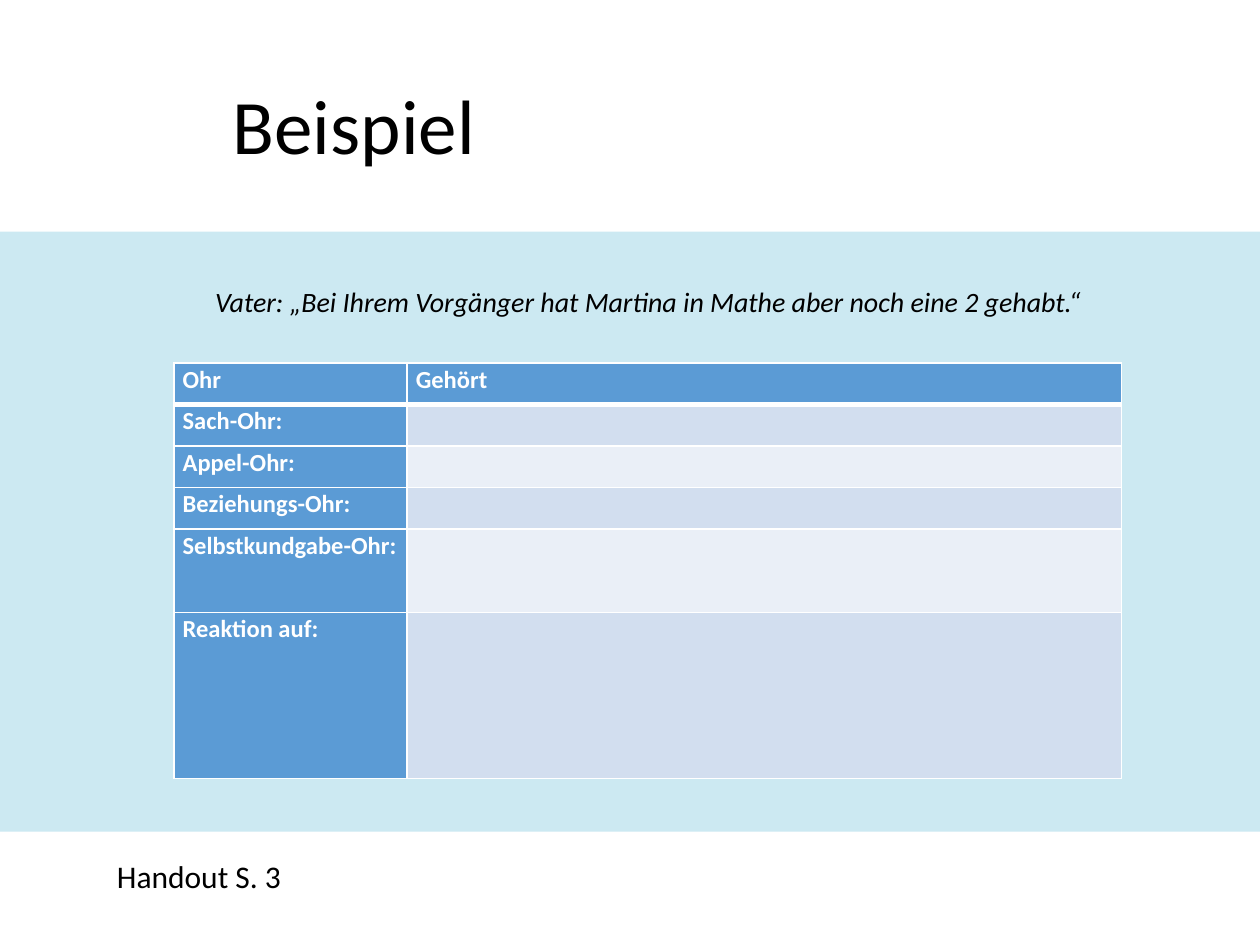
from lxml import etree
from pptx import Presentation
from pptx import util as u
from pptx.dml.color import RGBColor
from pptx.enum import shapes
from pptx.oxml import ns

WIDTH, HEIGHT = 10, 7.5
FONT = "Calibri"
BLACK = RGBColor(0x00, 0x00, 0x00)
WHITE = RGBColor(0xFF, 0xFF, 0xFF)
PALE_CYAN = RGBColor(0xCC, 0xE9, 0xF2)
BLUE = RGBColor(0x5B, 0x9B, 0xD5)
BANDS = (RGBColor(0xD2, 0xDE, 0xEF), RGBColor(0xEA, 0xEF, 0xF7))

HEADER = ("Ohr", "Gehört")
EARS = ("Sach-Ohr:", "Appel-Ohr:", "Beziehungs-Ohr:", "Selbstkundgabe-Ohr:", "Reaktion auf:")
COLUMN_WIDTHS = (1.85, 5.67)
ROW_UNIT = 0.33
ROW_SPANS = (1, 1, 1, 1, 2, 4)


def box(left, top, width, height):
    """Turn shares of the slide's size into lengths."""
    return (u.Inches(left * WIDTH), u.Inches(top * HEIGHT),
            u.Inches(width * WIDTH), u.Inches(height * HEIGHT))


def write(frame, content, size=18, color=BLACK, bold=False, italic=False, spacing=None):
    paragraph = frame.paragraphs[0]
    paragraph.line_spacing = spacing
    run = paragraph.add_run()
    run.text = content
    font = run.font
    font.name, font.size = FONT, u.Pt(size)
    font.bold, font.italic = bold, italic
    font.color.rgb = color


def add_text(slide, place, content, wrap=True, **style):
    frame = slide.shapes.add_textbox(*place).text_frame
    frame.word_wrap = wrap
    write(frame, content, **style)


def add_band(slide, place, color):
    band = slide.shapes.add_shape(shapes.MSO_SHAPE.RECTANGLE, *place)
    band.shadow.inherit = False
    band.fill.solid()
    band.fill.fore_color.rgb = color
    band.line.fill.background()


def set_borders(cell, **widths):
    """Draw white borders; the sides L, R, T and B take widths in points."""
    properties = cell._tc.get_or_add_tcPr()
    for side in "LRTB":
        line = etree.SubElement(properties, ns.qn(f"a:ln{side}"), w=str(u.Pt(widths.get(side, 1))))
        fill = etree.SubElement(line, ns.qn("a:solidFill"))
        etree.SubElement(fill, ns.qn("a:srgbClr"), val=str(WHITE))


def style_cell(cell, color, **borders):
    set_borders(cell, **borders)
    cell.fill.solid()
    cell.fill.fore_color.rgb = color
    cell.margin_left = cell.margin_right = u.Inches(0.07)
    cell.margin_top = cell.margin_bottom = 0


def add_ear_table(slide, place):
    rows = [HEADER] + [(ear, "") for ear in EARS]
    table = slide.shapes.add_table(len(rows), len(HEADER), *place).table
    for column, width in zip(table.columns, COLUMN_WIDTHS):
        column.width = u.Inches(width)
    for row, span in zip(table.rows, ROW_SPANS):
        row.height = u.Inches(ROW_UNIT * span)
    thick_sides = {0: {"B": 3}, 1: {"T": 3}}
    for r, labels in enumerate(rows):
        for c, label in enumerate(labels):
            cell = table.cell(r, c)
            color = BLUE if r == 0 or c == 0 else BANDS[(r - 1) % 2]
            style_cell(cell, color, **thick_sides.get(r, {}))
            if label:
                write(cell.text_frame, label, size=14, color=WHITE, bold=True, spacing=1.07)


def main():
    prs = Presentation()
    prs.slide_width, prs.slide_height = u.Inches(WIDTH), u.Inches(HEIGHT)
    slide = prs.slides.add_slide(prs.slide_layouts[6])
    add_band(slide, box(0, 0.245, 1, 0.635), PALE_CYAN)
    add_ear_table(slide, box(0.138, 0.384, 0.752, 0.44))
    add_text(slide, box(0.161, 0.295, 0.717, 0.09),
             "Vater: „Bei Ihrem Vorgänger hat Martina in Mathe aber noch eine 2 gehabt.“",
             wrap=False, size=16, italic=True)
    add_text(slide, box(0.175, 0.075, 0.351, 0.112), "Beispiel", size=44)
    add_text(slide, box(0.083, 0.9, 0.323, 0.053), "Handout S. 3")
    prs.save("out.pptx")


if __name__ == "__main__":
    main()
